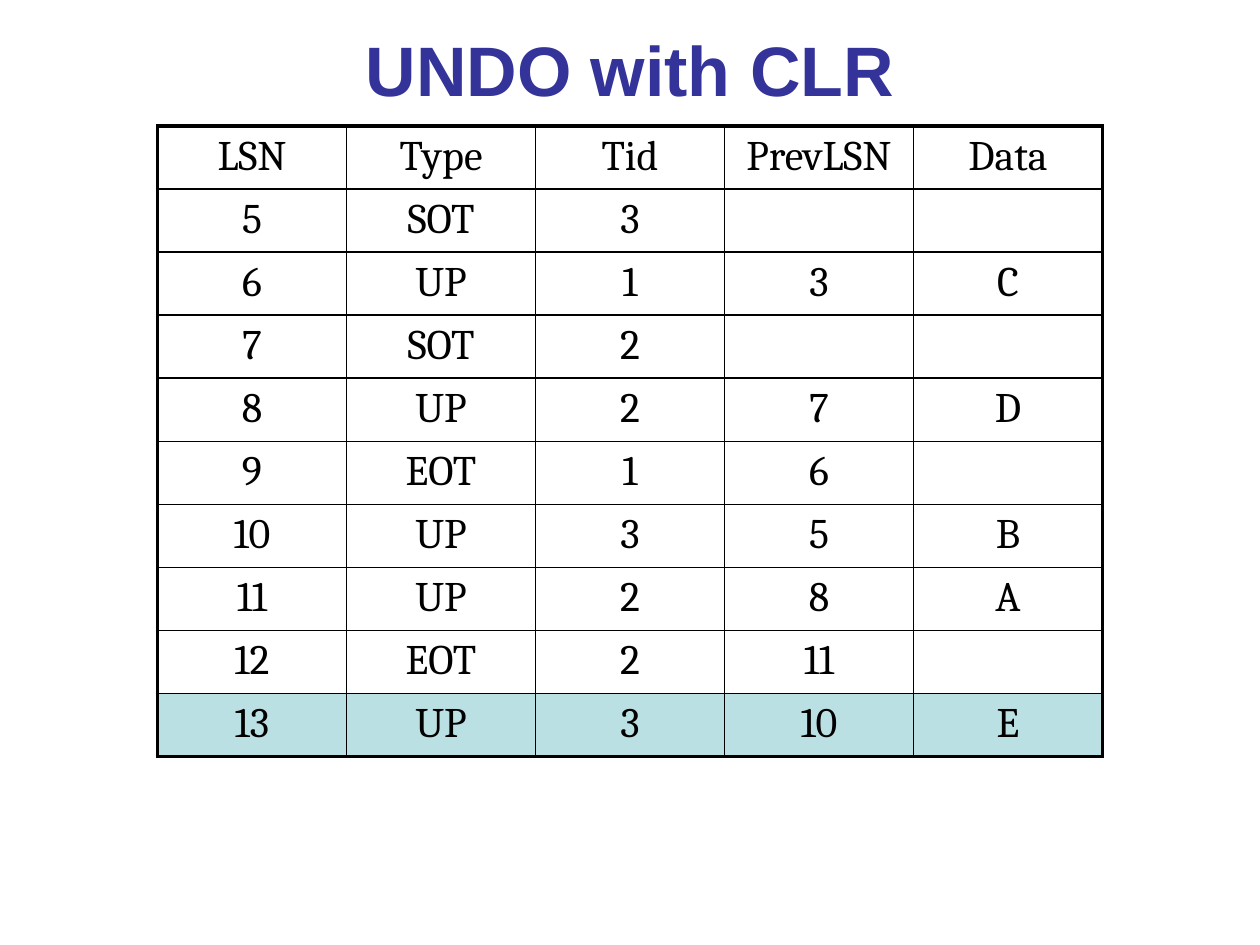
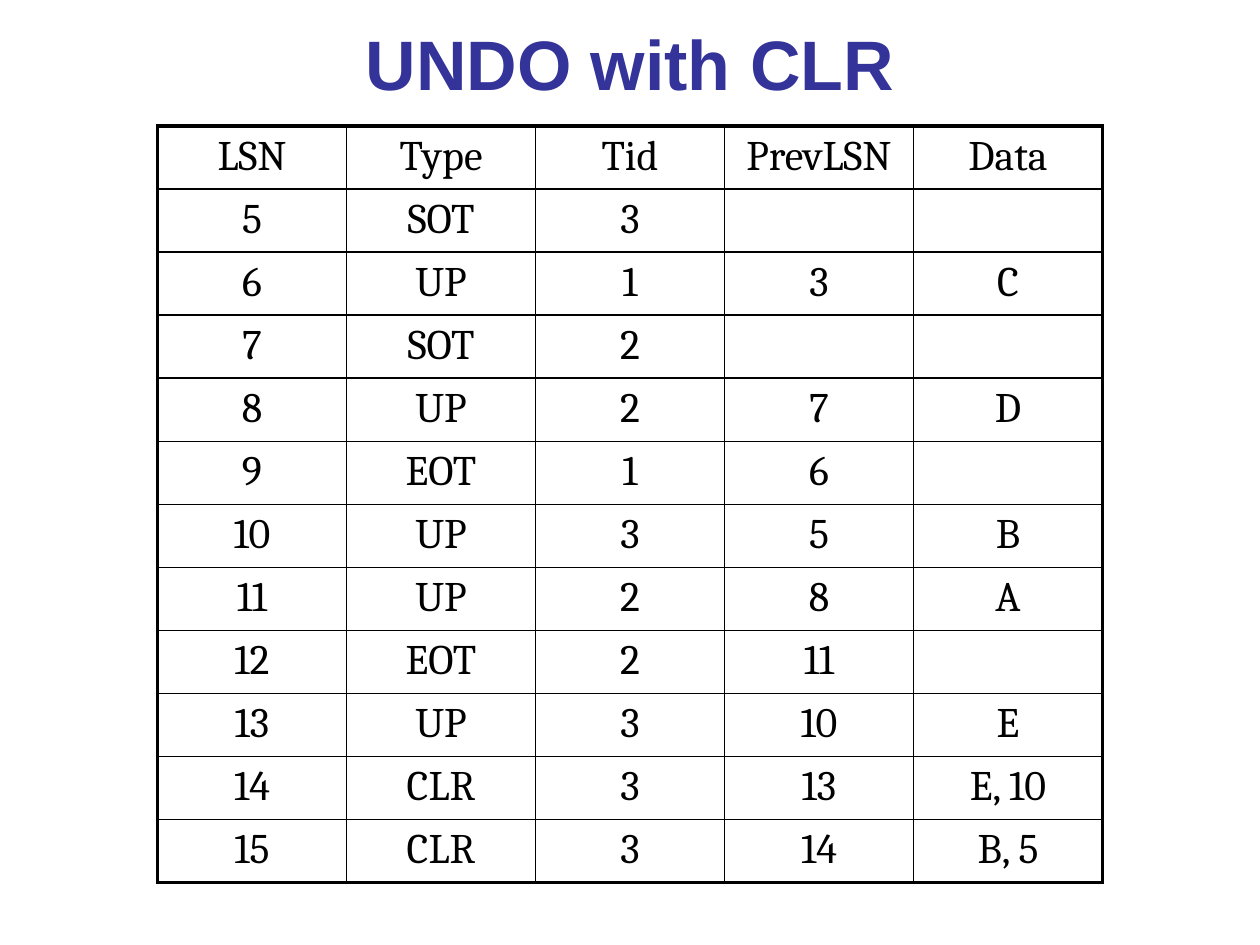
from lxml import etree
from pptx import Presentation
from pptx import util as u
from pptx.dml.color import RGBColor
from pptx.enum import text
from pptx.oxml.ns import qn

COLORS = {"title": "333399", "ink": "000000", "paper": "FFFFFF", "mark": "BBE0E3"}
COL_W, ROW_H = 1.5, 0.48

HEADER = ("LSN", "Type", "Tid", "PrevLSN", "Data")
LOG = [
    ("5", "SOT", "3", "", ""),
    ("6", "UP", "1", "3", "C"),
    ("7", "SOT", "2", "", ""),
    ("8", "UP", "2", "7", "D"),
    ("9", "EOT", "1", "6", ""),
    ("10", "UP", "3", "5", "B"),
    ("11", "UP", "2", "8", "A"),
    ("12", "EOT", "2", "11", ""),
    ("13", "UP", "3", "10", "E"),
]
CLRS = [
    ("14", "CLR", "3", "13", "E, 10"),
    ("15", "CLR", "3", "14", "B, 5"),
]


def write(tf, words, font="Cambria", size=24, color="ink", bold=False):
    p = tf.paragraphs[0]
    p.alignment = text.PP_ALIGN.CENTER
    p.font.size = u.Pt(size)
    if words:
        r = p.add_run()
        r.text = words
        r.font.name, r.font.size, r.font.bold = font, u.Pt(size), bold
        r.font.color.rgb = RGBColor.from_string(COLORS[color])


def set_borders(cell, widths):
    tcPr = cell._tc.get_or_add_tcPr()
    for i, (side, width) in enumerate(widths.items()):
        ln = etree.Element(qn(f"a:ln{side}"), w=str(u.Pt(width)))
        fill = etree.SubElement(ln, qn("a:solidFill"))
        etree.SubElement(fill, qn("a:srgbClr"), val=COLORS["ink"])
        tcPr.insert(i, ln)


prs = Presentation()
prs.slide_width, prs.slide_height = u.Inches(10), u.Inches(7.5)

# Each slide: title top, log records, LSN of the highlighted record
for title_top, log, marked in [(0, LOG, "13"), (-0.04, LOG + CLRS, None)]:
    s = prs.slides.add_slide(prs.slide_layouts[6])

    # Title
    sp = s.shapes.add_textbox(u.Inches(0.75), u.Inches(title_top), u.Inches(8.5), u.Inches(1.08))
    tf = sp.text_frame
    tf.word_wrap = True
    tf.vertical_anchor = text.MSO_ANCHOR.MIDDLE
    write(tf, "UNDO with CLR", font="Arial", size=40, color="title", bold=True)

    # Log table with a heavy outer frame
    rows = [HEADER] + log
    last_row, last_col = len(rows) - 1, len(HEADER) - 1
    table = s.shapes.add_table(len(rows), len(HEADER), u.Inches(1.25), u.Inches(1),
                               u.Inches(COL_W * len(HEADER)), u.Inches(ROW_H * len(rows))).table
    table.first_row = table.horz_banding = False
    for col in table.columns:
        col.width = u.Inches(COL_W)
    for i, record in enumerate(rows):
        table.rows[i].height = u.Inches(ROW_H)
        for j, words in enumerate(record):
            cell = table.cell(i, j)
            write(cell.text_frame, words)
            cell.fill.solid()
            fill = "mark" if record[0] == marked else "paper"
            cell.fill.fore_color.rgb = RGBColor.from_string(COLORS[fill])
            outer = {"L": j == 0, "R": j == last_col, "T": i == 0, "B": i == last_row}
            set_borders(cell, {side: 2.25 if edge else 1 for side, edge in outer.items()})

prs.save("out.pptx")
